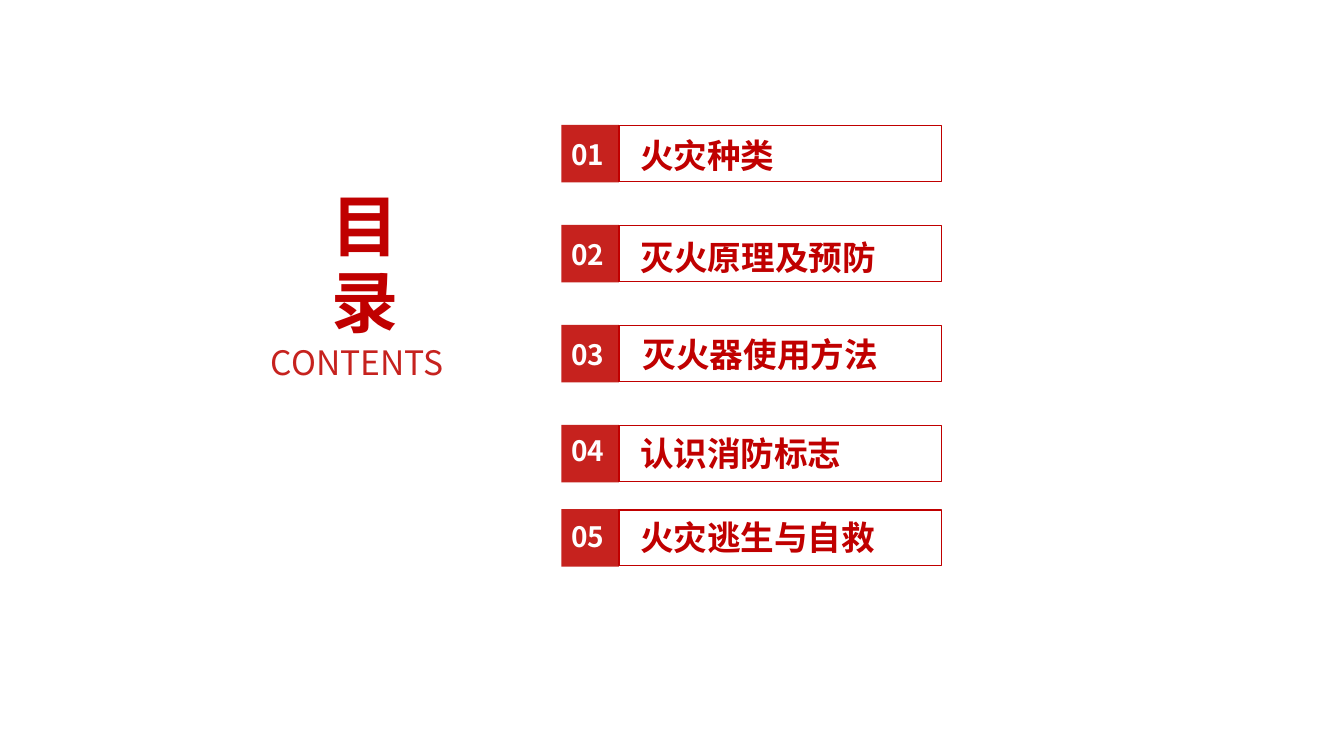
from lxml.etree import SubElement
from pptx import Presentation
from pptx.dml.color import RGBColor
from pptx.enum.shapes import MSO_SHAPE
from pptx.enum.text import MSO_AUTO_SIZE, PP_ALIGN
from pptx.oxml.ns import qn
from pptx.util import Cm, Pt

FONT = "Noto Sans CJK SC"
DEEP_RED = "C00000"
BADGE_RED = "C6221E"
WHITE = "FFFFFF"

ENTRY_LEFT, FIRST_TOP, ENTRY_PITCH = 14.15, 3.15, 2.52
LAST_TOP = 12.83
BADGE_SIZE = 1.45

# title, number drop, title indent, title drop (cm from the entry's corner)
ENTRIES = [
    ("火灾种类", 0.18, 1.73, 0.13),
    ("灭火原理及预防", 0.18, 1.75, 0.18),
    ("灭火器使用方法", 0.18, 1.8, 0.1),
    ("认识消防标志", 0.1, 1.73, 0.08),
    ("火灾逃生与自救", 0.13, 1.73, 0.08),
]


def rgb(hex_color):
    return RGBColor.from_string(hex_color)


def add_text(shapes, box, text, size, color, bold=True, align=None):
    """Add a one-paragraph text box; box is left, top, width, height in cm."""
    label = shapes.add_textbox(*map(Cm, box))
    frame = label.text_frame
    frame.word_wrap = True
    frame.auto_size = MSO_AUTO_SIZE.SHAPE_TO_FIT_TEXT
    frame.text = text
    paragraph = frame.paragraphs[0]
    paragraph.alignment = align
    run = paragraph.runs[0]
    run.font.size = Pt(size)
    run.font.bold = bold
    run.font.color.rgb = rgb(color)
    run.font.name = FONT
    SubElement(run.font._element, qn("a:ea"), typeface=FONT)
    return label


def add_box(shapes, box, fill=None, line=None):
    rectangle = shapes.add_shape(MSO_SHAPE.RECTANGLE, *map(Cm, box))
    rectangle.shadow.inherit = False
    if fill:
        rectangle.fill.solid()
        rectangle.fill.fore_color.rgb = rgb(fill)
    else:
        rectangle.fill.background()
    if line:
        rectangle.line.color.rgb = rgb(line)
        rectangle.line.width = Pt(1)
    else:
        rectangle.line.fill.background()


def add_heading(slide, left, top):
    """Vertical heading with its English line centred below."""
    heading = add_text(slide.shapes, (left + 5.87, top, 2.57, 4.14), "目录", 48, DEEP_RED)
    heading.text_frame._txBody.bodyPr.set("vert", "eaVert")
    heading.text_frame.paragraphs[0].runs[0].font._element.set("spc", "600")
    add_text(slide.shapes, (left, top + 3.89, 14.3, 1.3), "CONTENTS", 24, BADGE_RED,
             bold=False, align=PP_ALIGN.CENTER)


def add_entry(slide, left, top, number, title, number_drop, title_indent, title_drop):
    entry = slide.shapes.add_group_shape().shapes
    add_box(entry, (left, top, BADGE_SIZE, BADGE_SIZE), fill=BADGE_RED)
    add_text(entry, (left, top + number_drop, 2.51, 1.12), f"{number:02d}", 20, WHITE)
    add_box(entry, (left + BADGE_SIZE, top + 0.02, 8.13, 1.4), line=DEEP_RED)
    add_text(entry, (left + title_indent, top + title_drop, 6.5, 1.27), title, 24, DEEP_RED)


def main():
    presentation = Presentation()
    presentation.slide_width = Cm(33.87)
    presentation.slide_height = Cm(19.05)
    slide = presentation.slides.add_slide(presentation.slide_layouts[6])
    add_heading(slide, 1.85, 4.6)
    for index, entry in enumerate(ENTRIES):
        is_last = index == len(ENTRIES) - 1
        top = LAST_TOP if is_last else FIRST_TOP + index * ENTRY_PITCH
        add_entry(slide, ENTRY_LEFT, top, index + 1, *entry)
    presentation.save("out.pptx")


if __name__ == "__main__":
    main()
